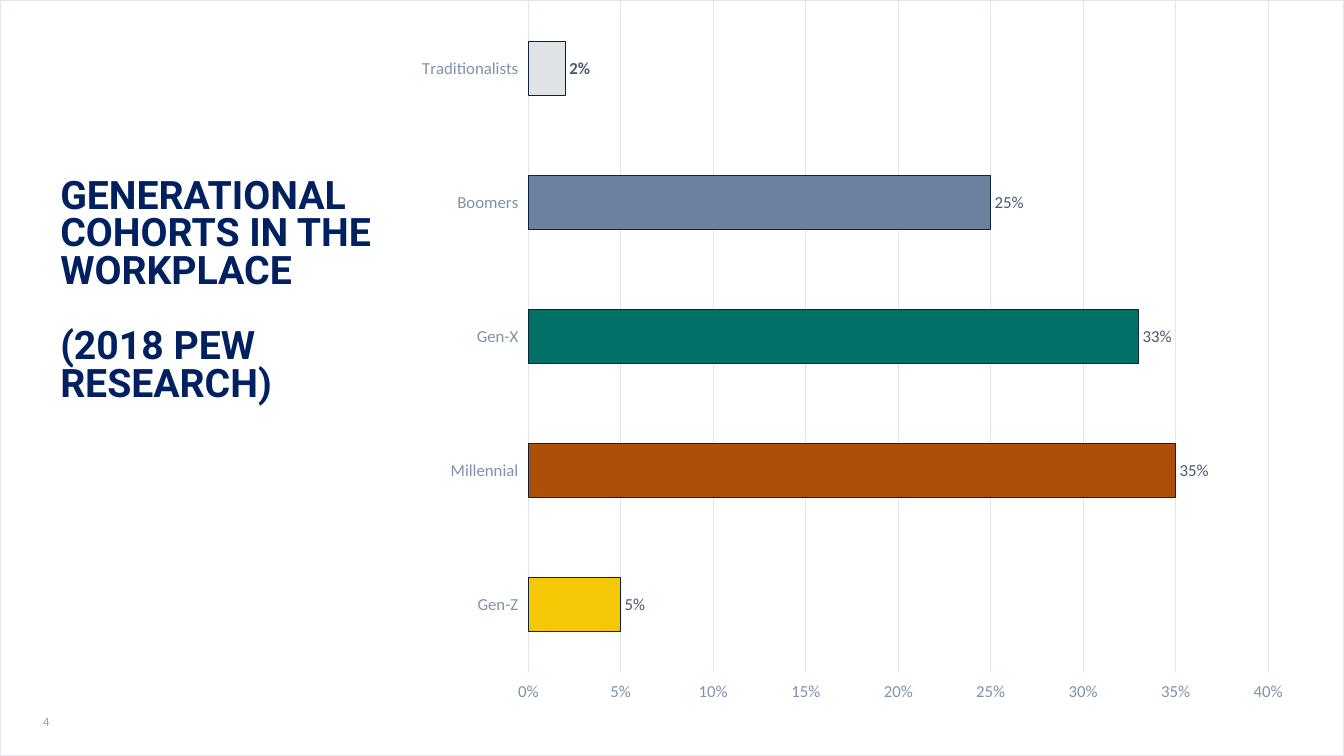
from pptx import Presentation
from pptx.chart.data import CategoryChartData
from pptx.dml.color import RGBColor
from pptx.enum.chart import XL_CHART_TYPE, XL_LABEL_POSITION, XL_TICK_MARK
from pptx.enum.text import MSO_ANCHOR
from pptx.oxml import parse_xml
from pptx.oxml.ns import nsdecls
from pptx.util import Cm, Pt

BAR_CLUSTERED = XL_CHART_TYPE.BAR_CLUSTERED
OUTSIDE_END = XL_LABEL_POSITION.OUTSIDE_END
TICK_OUTSIDE = XL_TICK_MARK.OUTSIDE
TOP, MIDDLE = MSO_ANCHOR.TOP, MSO_ANCHOR.MIDDLE

NAVY = RGBColor(0x00, 0x20, 0x60)
INK = RGBColor(0x0B, 0x23, 0x41)
SLATE = RGBColor(0x48, 0x59, 0x70)
AXIS_BLUE = RGBColor(0x7E, 0x92, 0xAC)
PALE = RGBColor(0xE1, 0xE6, 0xEC)
GRAY = RGBColor(0x99, 0x99, 0x99)

COHORTS = [
    ("Gen-Z", 0.05, RGBColor(0xF5, 0xC7, 0x05)),
    ("Millennial", 0.35, RGBColor(0xAE, 0x4F, 0x09)),
    ("Gen-X", 0.33, RGBColor(0x00, 0x71, 0x64)),
    ("Boomers", 0.25, RGBColor(0x6A, 0x81, 0x9F)),
    ("Traditionalists", 0.02, RGBColor(0xDF, 0xE2, 0xE6)),
]


def set_font(font, name, size, color, bold=False):
    font.name, font.size, font.bold = name, Pt(size), bold
    font.color.rgb = color


def set_line(line, color):
    line.width = Pt(0.75)
    line.color.rgb = color


def add_text(page, lines, left, top, width, height, *, font, size, color,
             bold=False, anchor=TOP, spacing=1.0, gap=0):
    box = page.shapes.add_textbox(Cm(left), Cm(top), Cm(width), Cm(height))
    frame = box.text_frame
    frame.word_wrap = True
    frame.vertical_anchor = anchor
    for index, line in enumerate(lines):
        para = frame.add_paragraph() if index else frame.paragraphs[0]
        para.line_spacing = spacing
        if index:
            para.space_before = Pt(gap)
        span = para.add_run()
        span.text = line
        set_font(span.font, font, size, color, bold)


def set_plot_area(chart, x, y, width, height):
    """Place the inner plot area, in fractions of the chart."""
    plot_area = chart._chartSpace.chart.plotArea
    for layout in plot_area.findall("{*}layout"):
        plot_area.remove(layout)
    places = "".join(f'<c:{tag} val="{value}"/>' for tag, value in
                     (("x", x), ("y", y), ("w", width), ("h", height)))
    plot_area.insert(0, parse_xml(
        f'<c:layout {nsdecls("c")}><c:manualLayout><c:layoutTarget val="inner"/>'
        '<c:xMode val="edge"/><c:yMode val="edge"/>'
        f'{places}</c:manualLayout></c:layout>'))


def set_chart_border(chart, color):
    chart._chartSpace.chart.addnext(parse_xml(
        f'<c:spPr {nsdecls("c", "a")}><a:noFill/><a:ln w="9525"><a:solidFill>'
        f'<a:srgbClr val="{color}"/></a:solidFill></a:ln></c:spPr>'))


def style_axis(axis):
    axis.major_tick_mark = TICK_OUTSIDE
    axis.format.line.fill.background()
    set_font(axis.tick_labels.font, "Calibri", 12, AXIS_BLUE)


def style_bars(plot):
    plot.gap_width = 150
    plot.vary_by_categories = False
    series = plot.series[0]
    for index, (_, _, color) in enumerate(COHORTS):
        bar = series.points[index].format
        bar.fill.solid()
        bar.fill.fore_color.rgb = color
        set_line(bar.line, INK)
    labels = series.data_labels
    labels.show_value = True
    labels.number_format, labels.number_format_is_linked = "0%", False
    labels.position = OUTSIDE_END
    set_font(labels.font, "Calibri", 12, SLATE)
    last_label = series.points[len(COHORTS) - 1].data_label
    set_font(last_label.font, "Calibri", 12, SLATE, bold=True)
    last_label.position = OUTSIDE_END


def add_cohort_chart(page, width, height):
    data = CategoryChartData(number_format="0%")
    data.categories = [name for name, _, _ in COHORTS]
    data.add_series("Series 1", [share for _, share, _ in COHORTS])
    chart = page.shapes.add_chart(BAR_CLUSTERED, 0, 0, width, height, data).chart
    set_font(chart.font, "Calibri", 10, SLATE)
    chart.has_legend = chart.has_title = False
    set_plot_area(chart, 0.393, 0.001, 0.551, 0.888)
    set_chart_border(chart, PALE)

    style_axis(chart.category_axis)
    shares = chart.value_axis
    style_axis(shares)
    shares.minimum_scale, shares.maximum_scale, shares.major_unit = 0, 0.4, 0.05
    shares.tick_labels.number_format = "0%"
    shares.tick_labels.number_format_is_linked = False
    shares.has_major_gridlines = True
    set_line(shares.major_gridlines.format.line, PALE)
    style_bars(chart.plots[0])


def main():
    deck = Presentation()
    deck.slide_width, deck.slide_height = Cm(33.87), Cm(19.05)
    page = deck.slides.add_slide(deck.slide_layouts[6])
    add_text(page, ["4"], 0.84, 17.68, 0.89, 1.02,
             font="Calibri", size=9, color=GRAY, anchor=MIDDLE)
    add_cohort_chart(page, deck.slide_width, deck.slide_height)
    add_text(page, ["GENERATIONAL COHORTS IN THE WORKPLACE", "(2018 PEW RESEARCH)"],
             1.27, 4.39, 8.76, 5.51, font="Roboto", size=28, color=NAVY,
             bold=True, spacing=0.8, gap=26.8)
    deck.save("out.pptx")


if __name__ == "__main__":
    main()
